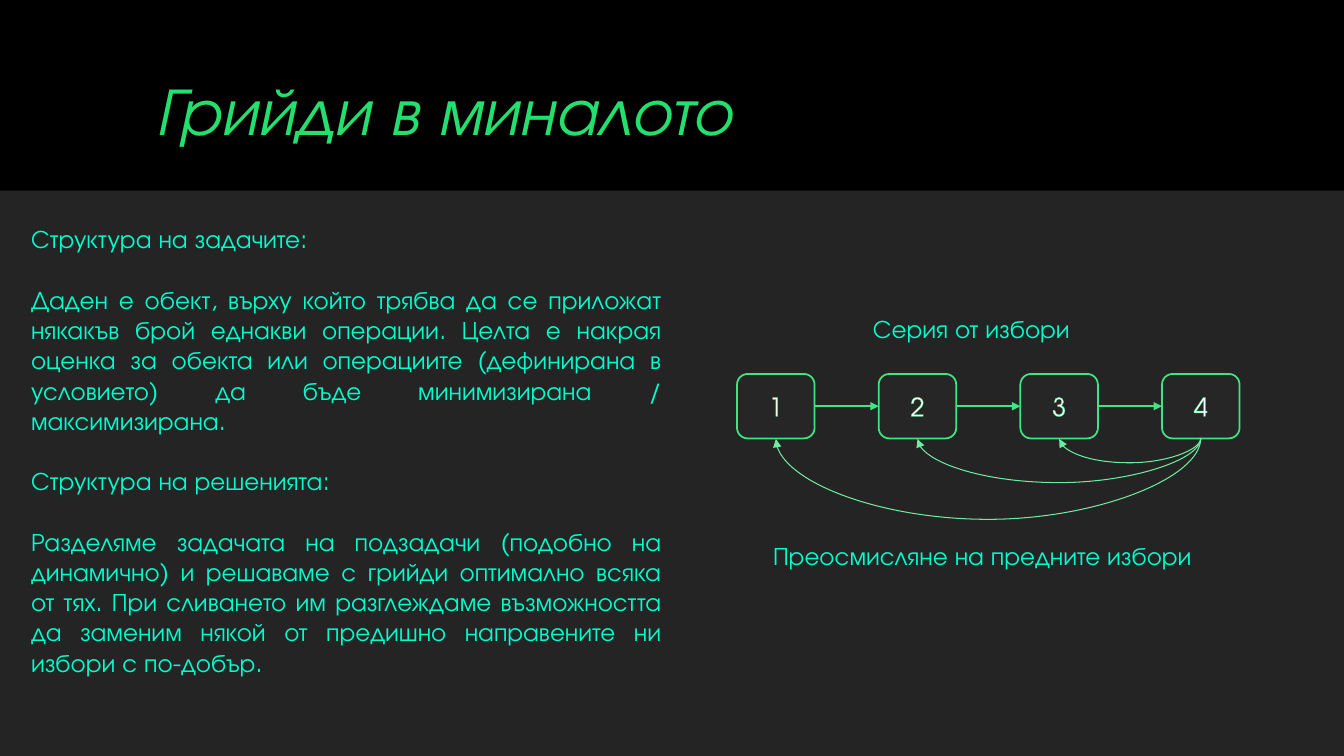
from lxml import etree
from pptx import Presentation
from pptx.dml.color import RGBColor
from pptx.enum.shapes import MSO_CONNECTOR as LINE, MSO_SHAPE as SHAPE
from pptx.enum.text import MSO_ANCHOR as ANCHOR, PP_ALIGN as ALIGN
from pptx.oxml.ns import qn
from pptx.util import Inches, Pt

TITLE = "Грийди в миналото"
BODY = [
    "Структура на задачите:",
    "Даден е обект, върху който трябва да се приложат някакъв брой еднакви "
    "операции. Целта е накрая оценка за обекта или операциите (дефинирана в "
    "условието) да бъде минимизирана / максимизирана.",
    "Структура на решенията:",
    "Разделяме задачата на подзадачи (подобно на динамично) и решаваме с "
    "грийди оптимално всяка от тях. При сливането им разглеждаме "
    "възможността да заменим някой от предишно направените ни избори с "
    "по-добър.",
]
LABELS = [
    ("Серия от избори", (8.56, 3.06, 2.34, 0.4)),
    ("Преосмисляне на предните избори", (7.57, 5.31, 4.84, 0.4)),
]
STEPS = ["1", "2", "3", "4"]
DROPS = [0.82, 0.45, 0.25]

FONT = "TeX Gyre Adventor"
BLACK = RGBColor(0x00, 0x00, 0x00)
GREY = RGBColor(0x26, 0x26, 0x26)
WHITE = RGBColor(0xFF, 0xFF, 0xFF)
MINT = RGBColor(0x00, 0xFF, 0xCC)
GREEN = RGBColor(0x40, 0xE4, 0x82)
PALE = RGBColor(0x6F, 0xEB, 0xA0)
FADE = [RGBColor(0x23, 0xE0, 0x6E), RGBColor(0x44, 0xFF, 0xF5)]

LEFT, TOP, PITCH = 7.31, 3.71, 1.405
WIDE, HIGH = 0.77, 0.64
RISE = 0.01


def add_run(para, text, size=18, color=None):
    run = para.add_run()
    run.text = text
    run.font.name = FONT
    run.font.size = Pt(size)
    if color is not None:
        run.font.color.rgb = color
    return run


def add_text(slide, box, lines, align=ALIGN.LEFT):
    frame = slide.shapes.add_textbox(*map(Inches, box)).text_frame
    frame.word_wrap = True
    for i, line in enumerate(lines):
        para = frame.add_paragraph() if i else frame.paragraphs[0]
        para.alignment = align
        if i:
            para.space_before = Pt(21.6)
        add_run(para, line, color=MINT)


def add_title(slide):
    box = map(Inches, (0.29, 0.47, 8.23, 1.06))
    frame = slide.shapes.add_textbox(*box).text_frame
    frame.word_wrap = True
    frame.vertical_anchor = ANCHOR.BOTTOM
    para = frame.paragraphs[0]
    para.alignment = ALIGN.CENTER
    font = add_run(para, TITLE, 48).font
    font.italic = True
    font.fill.gradient()
    font.fill.gradient_angle = 270
    for stop, color in zip(font.fill.gradient_stops, FADE):
        stop.color.rgb = color


def add_box(slide, kind, box):
    shape = slide.shapes.add_shape(kind, *map(Inches, box))
    shape.shadow.inherit = False
    shape.fill.solid()
    shape.fill.fore_color.rgb = GREY
    return shape


def add_panel(slide):
    panel = add_box(slide, SHAPE.RECTANGLE, (0, 1.89, 13.33, 5.61))
    panel.line.fill.background()
    color = panel.fill._xPr.find(".//" + qn("a:srgbClr"))
    etree.SubElement(color, qn("a:alpha"), val="95000")


def add_step(slide, i, text):
    box = (LEFT + i * PITCH, TOP, WIDE, HIGH)
    shape = add_box(slide, SHAPE.ROUNDED_RECTANGLE, box)
    shape.line.color.rgb = GREEN
    shape.line.width = Pt(1.25)
    frame = shape.text_frame
    frame.vertical_anchor = ANCHOR.MIDDLE
    para = frame.paragraphs[0]
    para.alignment = ALIGN.CENTER
    run = add_run(para, text, color=WHITE)
    edge = etree.Element(qn("a:ln"), w=str(Pt(0.75)))
    fill = etree.SubElement(edge, qn("a:solidFill"))
    etree.SubElement(fill, qn("a:srgbClr"), val=str(GREEN))
    run.font._element.insert(0, edge)
    return shape


def add_arrow(slide, kind, ends, color, width):
    arrow = slide.shapes.add_connector(kind, *map(Inches, ends))
    arrow.line.color.rgb = color
    arrow.line.width = Pt(width)
    etree.SubElement(arrow.line._get_or_add_ln(), qn("a:tailEnd"), type="triangle")
    etree.SubElement(arrow._element.spPr, qn("a:effectLst"))
    return arrow


def add_curve(slide, start, end, drop):
    mid, span = (start + end) / 2, start - end
    y = TOP + HIGH
    ends = (mid - RISE / 2, y - span / 2, mid + RISE / 2, y + span / 2)
    curve = add_arrow(slide, LINE.CURVE, ends, PALE, 0.75)
    props = curve._element.spPr
    props.find(qn("a:xfrm")).set("rot", "5400000")
    bend = round(drop / RISE * 100000)
    guides = props.find(qn("a:prstGeom")).get_or_add_avLst()
    etree.SubElement(guides, qn("a:gd"), name="adj1", fmla=f"val {bend}")


def main():
    deck = Presentation()
    deck.slide_width, deck.slide_height = Inches(13.33), Inches(7.5)
    slide = deck.slides.add_slide(deck.slide_layouts[6])
    slide.background.fill.solid()
    slide.background.fill.fore_color.rgb = BLACK

    add_panel(slide)
    add_title(slide)
    add_text(slide, (0.21, 2.17, 6.45, 4.64), BODY, ALIGN.JUSTIFY)
    for text, box in LABELS:
        add_text(slide, box, [text])

    steps = [add_step(slide, i, text) for i, text in enumerate(STEPS)]
    for a, b in zip(steps, steps[1:]):
        arrow = add_arrow(slide, LINE.STRAIGHT, (0, 0, 1, 1), GREEN, 1.5)
        arrow.begin_connect(a, 3)
        arrow.end_connect(b, 1)

    mids = [LEFT + i * PITCH + WIDE / 2 for i in range(len(STEPS))]
    for mid, drop in zip(mids, DROPS):
        add_curve(slide, mids[-1], mid, drop)

    deck.save("out.pptx")


if __name__ == "__main__":
    main()
